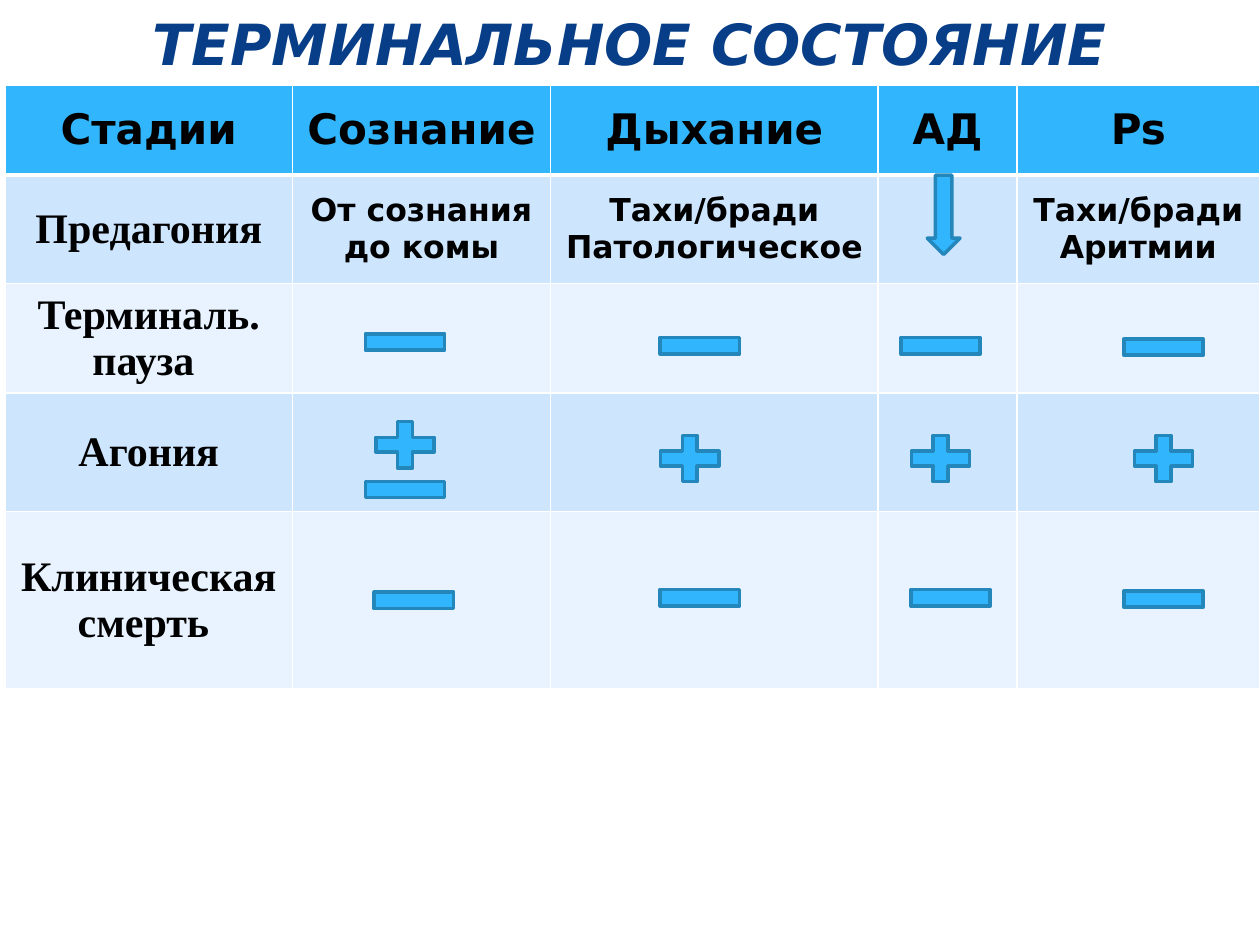
from itertools import product

from lxml import etree
from pptx import Presentation
from pptx.dml.color import RGBColor
from pptx.enum.shapes import MSO_SHAPE
from pptx.enum.text import MSO_ANCHOR, MSO_AUTO_SIZE, PP_ALIGN
from pptx.oxml.ns import qn
from pptx.util import Inches, Pt

ARROW, MINUS, PLUS = MSO_SHAPE.DOWN_ARROW, MSO_SHAPE.RECTANGLE, MSO_SHAPE.MATH_PLUS
CENTER, MIDDLE = PP_ALIGN.CENTER, MSO_ANCHOR.MIDDLE
SANS, SERIF = "DejaVu Sans", "Times New Roman"
COLORS = {"title": "073E87", "text": "000000", "accent": "31B6FD",
          "outline": "2487BB", "odd": "CEE5FE", "even": "E8F3FF", "border": "FFFFFF"}

COL_WIDTHS = [2.28, 2.05, 2.6, 1.1, 1.93]
ROW_HEIGHTS = [0.71, 0.86, 0.87, 0.94, 1.41]
ROWS = [
    ["Стадии", "Сознание", "Дыхание", "АД", "Ps"],
    ["Предагония", "От сознания до комы", "Тахи/бради\nПатологическое", "",
     "Тахи/бради\nАритмии"],
    ["Терминаль. пауза ", "", "", "", ""],
    ["Агония", "", "", "", ""],
    ["Клиническая смерть ", "", "", "", ""],
]

# Marks: shape, size, then (left, top) of each one
MARKS = [
    (ARROW, (0.26, 0.63), [(7.36, 1.39)]),
    (MINUS, (0.63, 0.13), [(2.9, 2.65), (5.24, 2.68), (7.15, 2.68), (8.92, 2.69),
                           (2.97, 4.7), (5.24, 4.68), (7.23, 4.68), (8.92, 4.69),
                           (2.9, 3.82)]),
    (PLUS, (0.63, 0.5), [(2.9, 3.28), (5.16, 3.39), (7.15, 3.39), (8.92, 3.39)]),
]


def rgb(name):
    return RGBColor.from_string(COLORS[name])


def write(tf, text, font, size, color, italic=False):
    tf.text = text
    for p in tf.paragraphs:
        p.alignment = CENTER
        p.font.name, p.font.size = font, Pt(size)
        p.font.bold, p.font.italic = True, italic
        p.font.color.rgb = rgb(color)


def set_borders(cell, bottom):
    tc_pr = cell._tc.get_or_add_tcPr()
    for side, width in (("L", 1), ("R", 1), ("T", 1), ("B", bottom)):
        ln = etree.SubElement(tc_pr, qn(f"a:ln{side}"), w=str(Pt(width)))
        fill = etree.SubElement(ln, qn("a:solidFill"))
        etree.SubElement(fill, qn("a:srgbClr"), val=COLORS["border"])


def add_title(s, text):
    sp = s.shapes.title
    sp.left, sp.top, sp.width, sp.height = 0, 0, Inches(10), Inches(0.68)
    write(sp.text_frame, text, SANS, 32.4, "title", italic=True)
    sp.text_frame.vertical_anchor = MIDDLE
    sp.text_frame.auto_size = MSO_AUTO_SIZE.NONE


def add_stage_table(s):
    table = s.shapes.add_table(len(ROWS), len(COL_WIDTHS), Inches(0.04), Inches(0.68),
                               Inches(sum(COL_WIDTHS)), Inches(sum(ROW_HEIGHTS))).table
    for col, width in zip(table.columns, COL_WIDTHS):
        col.width = Inches(width)
    for row, height in zip(table.rows, ROW_HEIGHTS):
        row.height = Inches(height)
    for r, c in product(range(len(ROWS)), range(len(COL_WIDTHS))):
        cell = table.cell(r, c)
        header, stage = r == 0, r > 0 and c == 0
        # The header is set off by a thicker line; body rows alternate
        set_borders(cell, 3 if header else 1)
        cell.fill.solid()
        cell.fill.fore_color.rgb = rgb("accent" if header else "odd" if r % 2 else "even")
        cell.vertical_anchor = MIDDLE
        write(cell.text_frame, ROWS[r][c], SERIF if stage else SANS,
              24 if header or stage else 18, "text")


def add_mark(s, kind, left, top, width, height):
    sp = s.shapes.add_shape(kind, Inches(left), Inches(top), Inches(width), Inches(height))
    sp.shadow.inherit = False
    sp.fill.solid()
    sp.fill.fore_color.rgb = rgb("accent")
    sp.line.color.rgb = rgb("outline")
    sp.line.width = Pt(2)


def main():
    prs = Presentation()
    prs.slide_width, prs.slide_height = Inches(10), Inches(7.5)
    s = prs.slides.add_slide(prs.slide_layouts[5])
    add_title(s, "ТЕРМИНАЛЬНОЕ СОСТОЯНИЕ")
    add_stage_table(s)
    for kind, size, places in MARKS:
        for place in places:
            add_mark(s, kind, *place, *size)
    prs.save("out.pptx")


if __name__ == "__main__":
    main()
